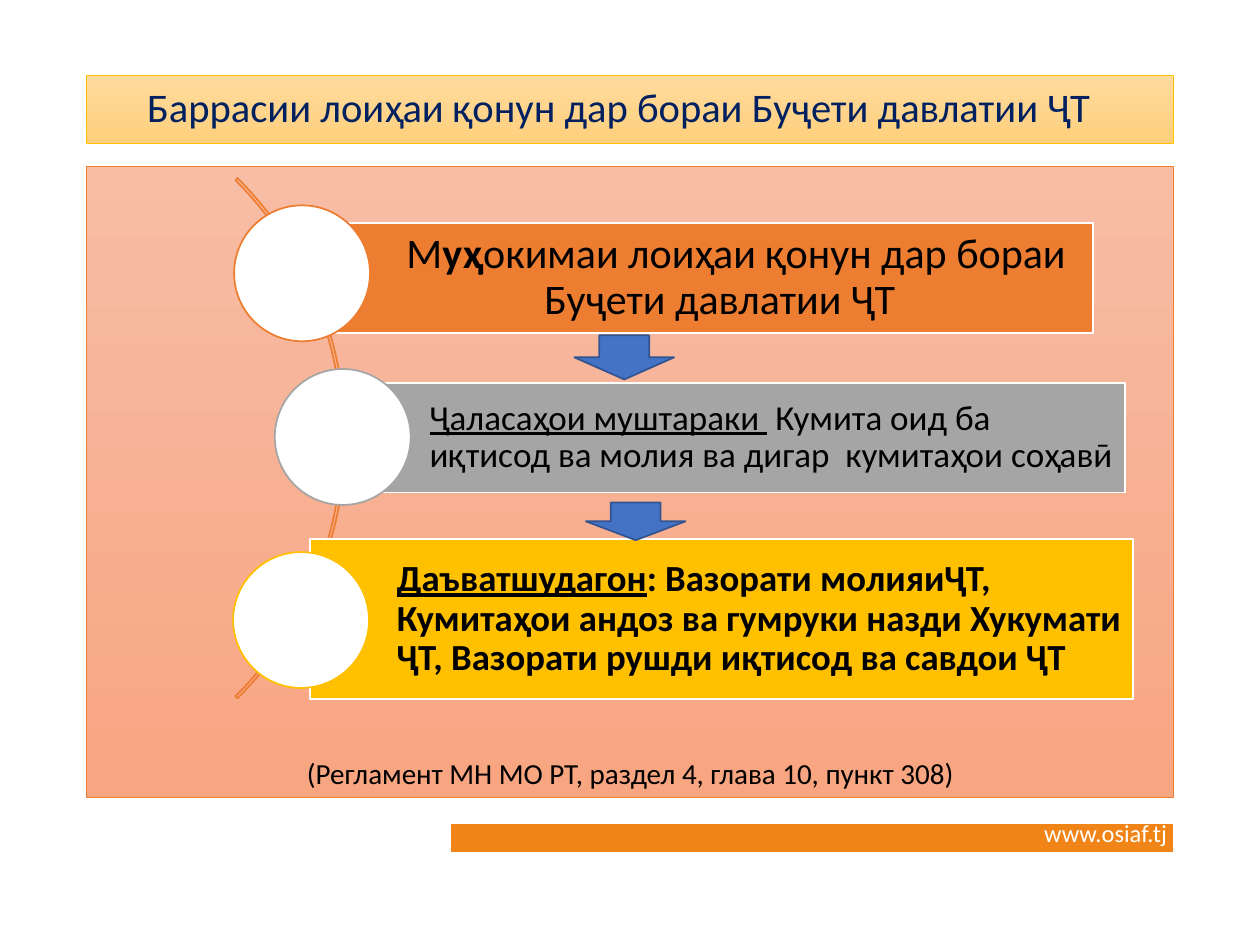
from pptx import Presentation
from pptx.dml.color import RGBColor
from pptx.enum.shapes import MSO_CONNECTOR, MSO_SHAPE
from pptx.enum.text import MSO_ANCHOR, PP_ALIGN
from pptx.oxml.ns import qn
from pptx.util import Cm, Pt

# Content: runs are (text, bold, underline)
TITLE = "Баррасии лоиҳаи қонун дар бораи Буҷети давлатии ҶТ"
NOTE = "(Регламент МН МО РТ, раздел 4, глава 10, пункт 308)"
SITE = "www.osiaf.tj"
STEPS = [
    dict(bar=(5.44, 4.5, 16.59, 2.21), dot=(4.72, 4.14), color="ED7D31",
         size=24, align=PP_ALIGN.CENTER, pad=0.2, indent=0.66,
         runs=[("М", False, False), ("уҳ", True, False),
               ("окимаи лоиҳаи қонун дар бораи Буҷети давлатии ҶТ", False, False)]),
    dict(bar=(6.91, 7.72, 15.77, 2.21), dot=(5.54, 7.44), color="A5A5A5",
         size=20, align=PP_ALIGN.LEFT, pad=0.15, indent=0,
         runs=[("Ҷаласаҳои муштараки ", False, True),
               (" Кумита оид ба иқтисод ва молия ва дигар  кумитаҳои соҳавӣ",
                False, False)]),
    dict(bar=(6.25, 10.87, 16.59, 3.23), dot=(4.7, 11.13), color="FFC000",
         size=21, align=PP_ALIGN.LEFT, pad=0.15, indent=0,
         runs=[("Даъватшудагон", True, True),
               (": Вазорати молияиҶТ, Кумитаҳои андоз ва гумруки назди Хукумати "
                "ҶТ, Вазорати рушди иқтисод ва савдои ҶТ", True, False)]),
]
ARROWS = [(11.58, 6.76, 2.01, 0.89), (11.81, 10.13, 2.01, 0.76)]
LEFT, WIDE = 1.75, 21.9
DOT = 2.74

deck = Presentation()
deck.slide_width, deck.slide_height = Cm(25.4), Cm(19.05)
slide = deck.slides.add_slide(deck.slide_layouts[6])
shapes = slide.shapes


def rgb(code):
    return RGBColor.from_string(code)


def draw(kind, box, fill, edge, width=1):
    """Add a shape; fill is a colour, a pair for a gradient, or None."""
    shape = shapes.add_shape(kind, *map(Cm, box))
    shape.shadow.inherit = False
    if fill is None:
        shape.fill.background()
    elif isinstance(fill, tuple):
        shape.fill.gradient()
        shape.fill.gradient_angle = 270
        for stop, code, place in zip(shape.fill.gradient_stops, fill, (0, 1)):
            stop.color.rgb = rgb(code)
            stop.position = place
    else:
        shape.fill.solid()
        shape.fill.fore_color.rgb = rgb(fill)
    shape.line.color.rgb = rgb(edge)
    shape.line.width = Pt(width)
    return shape


def write(shape, runs, size, color, align, pads, anchor=MSO_ANCHOR.MIDDLE):
    """Fill a shape with one paragraph; pads are left, top, right, bottom."""
    frame = shape.text_frame
    frame.word_wrap = True
    frame.vertical_anchor = anchor
    (frame.margin_left, frame.margin_top,
     frame.margin_right, frame.margin_bottom) = map(Cm, pads)
    para = frame.paragraphs[0]
    para.alignment = align
    para.line_spacing = 0.9
    para.font.name = "Calibri"
    para.font.size = Pt(size)
    para.font.color.rgb = rgb(color)
    for text, bold, under in runs:
        run = para.add_run()
        run.text = text
        run.font.bold = bold
        run.font.underline = under
    return para


# Footer band with the site address
band = shapes.add_connector(MSO_CONNECTOR.STRAIGHT, Cm(9.09), Cm(16.89),
                            Cm(LEFT + WIDE), Cm(16.89))
band.line.color.rgb = rgb("F08416")
band.line.width = Pt(16)
props = band._element.spPr
props.append(props.makeelement(qn("a:effectLst"), {}))
site = shapes.add_textbox(Cm(20.8), Cm(16.43), Cm(4.04), Cm(0.86))
write(site, [(SITE, False, False)], 14, "FFFFFF", PP_ALIGN.LEFT,
      (0.25, 0.13, 0.25, 0.13), MSO_ANCHOR.TOP)

# Title and main panel
head = draw(MSO_SHAPE.RECTANGLE, (LEFT, 1.52, WIDE, 1.37),
            ("FFDB9E", "FFD07C"), "FFC000", 0.5)
write(head, [(TITLE, False, False)], 23.2, "002060", PP_ALIGN.CENTER,
      (0.25, 0.13, 0.7, 0.13))
panel = draw(MSO_SHAPE.RECTANGLE, (LEFT, 3.35, WIDE, 12.73),
             ("F7BDA5", "F8A582"), "ED7D31", 0.5)
write(panel, [(NOTE, False, False)], 16.6, "000000", PP_ALIGN.CENTER,
      (0.25, 0.13, 0.25, 0.13), MSO_ANCHOR.BOTTOM)

# Arc behind the steps, from 315 to 45 degrees
arc = draw(MSO_SHAPE.BLOCK_ARC, (-7.87, 1.42, 14.83, 14.83), None, "ED7D31")
for i, value in enumerate((189, 27, 0.004)):
    arc.adjustments[i] = value

# Steps: a bar with text and a round marker
for step in STEPS:
    bar = draw(MSO_SHAPE.RECTANGLE, step["bar"], step["color"], "FFFFFF")
    pad = step["pad"]
    para = write(bar, step["runs"], step["size"], "000000", step["align"],
                 (1.75, pad, pad, pad))
    if step["indent"]:
        para._p.get_or_add_pPr().set("indent", str(Cm(step["indent"])))
    draw(MSO_SHAPE.OVAL, (*step["dot"], DOT, DOT), "FFFFFF", step["color"])

# Arrows between steps
for box in ARROWS:
    draw(MSO_SHAPE.DOWN_ARROW, box, "4472C4", "325491")

deck.save("out.pptx")
